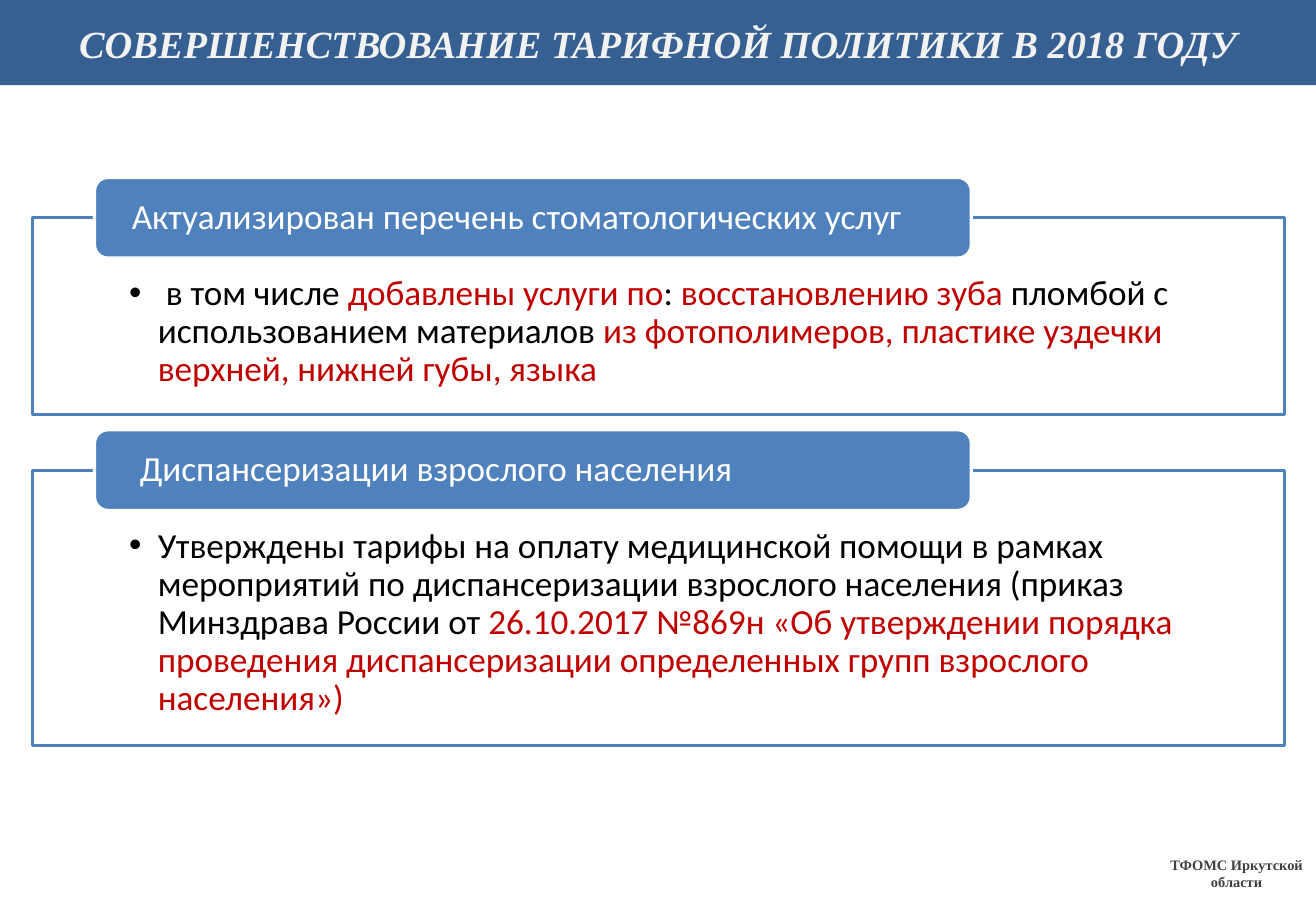
from lxml import etree
from pptx import Presentation
from pptx import util as u
from pptx.dml.color import RGBColor
from pptx.enum import shapes, text
from pptx.oxml.ns import qn

COLORS = {
    "band": "376092", "title": "F2F2F2", "accent": "4F81BD", "white": "FFFFFF",
    "black": "000000", "red": "C00000", "footer": "404040",
}
SIDE, WIDTH = 0.28, 10.87
LABEL_RISE = 0.35
SECTIONS = [
    (1.89, 1.71, "Актуализирован перечень стоматологических услуг", [
        (" в том числе ", "black"),
        ("добавлены услуги по", "red"),
        (": ", "black"),
        ("восстановлению зуба ", "red"),
        ("пломбой с использованием материалов ", "black"),
        ("из фотополимеров, пластике уздечки верхней, нижней губы, языка", "red"),
    ]),
    (4.08, 2.39, " Диспансеризации взрослого населения", [
        ("Утверждены тарифы на оплату медицинской помощи в рамках мероприятий по "
         "диспансеризации взрослого населения (приказ Минздрава России от ", "black"),
        ("26.10.2017 №869н «Об утверждении порядка проведения диспансеризации "
         "определенных групп взрослого населения»)", "red"),
    ]),
]


def color(name):
    return RGBColor.from_string(COLORS[name])


def place(shape, left, top, width, height):
    shape.left, shape.top = u.Inches(left), u.Inches(top)
    shape.width, shape.height = u.Inches(width), u.Inches(height)


def paint(shape, fill, line=None):
    shape.fill.solid()
    shape.fill.fore_color.rgb = color(fill)
    if line:
        shape.line.color.rgb = color(line)
        shape.line.width = u.Pt(2)


def set_frame(shape, anchor, left=0.1, top=0.05, right=0.1, bottom=0.05):
    frame = shape.text_frame
    frame.word_wrap = True
    frame.auto_size = text.MSO_AUTO_SIZE.NONE
    frame.vertical_anchor = anchor
    frame.margin_left, frame.margin_right = u.Inches(left), u.Inches(right)
    frame.margin_top, frame.margin_bottom = u.Inches(top), u.Inches(bottom)
    return frame.paragraphs[0]


def add_span(para, words, tint, size=22, font="Calibri", bold=False, italic=False):
    span = para.add_run()
    span.text = words
    span.font.name, span.font.size = font, u.Pt(size)
    span.font.bold, span.font.italic = bold, italic
    span.font.color.rgb = color(tint)


def add_title(page, left, top, width, height):
    title = page.shapes.title
    place(title, left, top, width, height)
    paint(title, "band")
    para = set_frame(title, text.MSO_ANCHOR.MIDDLE)
    para.alignment = text.PP_ALIGN.CENTER
    add_span(para, "СОВЕРШЕНСТВОВАНИЕ ТАРИФНОЙ ПОЛИТИКИ В 2018 ГОДУ", "title",
             24, "Times New Roman", bold=True, italic=True)


def fill_body(body, left, top, width, height, spans):
    """Turn a body placeholder into a framed list with one bullet."""
    place(body, left, top, width, height)
    paint(body, "white", "accent")
    tint = body.fill._xPr.find(qn("a:solidFill"))[0]
    etree.SubElement(tint, qn("a:alpha"), val="90000")
    para = set_frame(body, text.MSO_ANCHOR.TOP, 0.84, 0.5, 0.84, 0.17)
    props = para._p.get_or_add_pPr()
    props.set("marL", str(u.Inches(0.25)))
    props.set("indent", str(-u.Inches(0.25)))
    etree.SubElement(props, qn("a:buChar"), char="•")
    para.line_spacing, para.space_before = 0.9, u.Pt(0)
    for words, tint_name in spans:
        add_span(para, words, tint_name)


def add_label(page, left, top, width, height, words):
    label = page.shapes.add_shape(
        shapes.MSO_SHAPE.ROUNDED_RECTANGLE, u.Inches(left), u.Inches(top),
        u.Inches(width), u.Inches(height))
    label.shadow.inherit = False
    paint(label, "accent", "white")
    para = set_frame(label, text.MSO_ANCHOR.MIDDLE, 0.29, 0, 0.29, 0)
    para.alignment = text.PP_ALIGN.LEFT
    para.line_spacing = 0.9
    add_span(para, words, "white")


def add_section(page, body, left, top, width, height, heading, spans):
    fill_body(body, left, top, width, height, spans)
    add_label(page, left + 0.54, top - LABEL_RISE, 0.7 * width, 2 * LABEL_RISE, heading)


def add_footer(page, left, top, width, height):
    box = page.shapes.add_textbox(u.Inches(left), u.Inches(top),
                                  u.Inches(width), u.Inches(height))
    para = set_frame(box, text.MSO_ANCHOR.TOP)
    para.alignment = text.PP_ALIGN.CENTER
    add_span(para, "ТФОМС Иркутской области", "footer", 9, "Times New Roman", bold=True)


def main():
    deck = Presentation()
    deck.slide_width, deck.slide_height = u.Inches(11.42), u.Inches(7.88)
    page = deck.slides.add_slide(deck.slide_layouts.get_by_name("Two Content"))
    add_title(page, 0, 0, 11.42, 0.74)
    bodies = list(page.placeholders)[1:]
    for body, (top, height, heading, spans) in zip(bodies, SECTIONS):
        add_section(page, body, SIDE, top, WIDTH, height, heading, spans)
    add_footer(page, 10.04, 7.38, 1.38, 0.4)
    deck.save("out.pptx")


if __name__ == "__main__":
    main()
